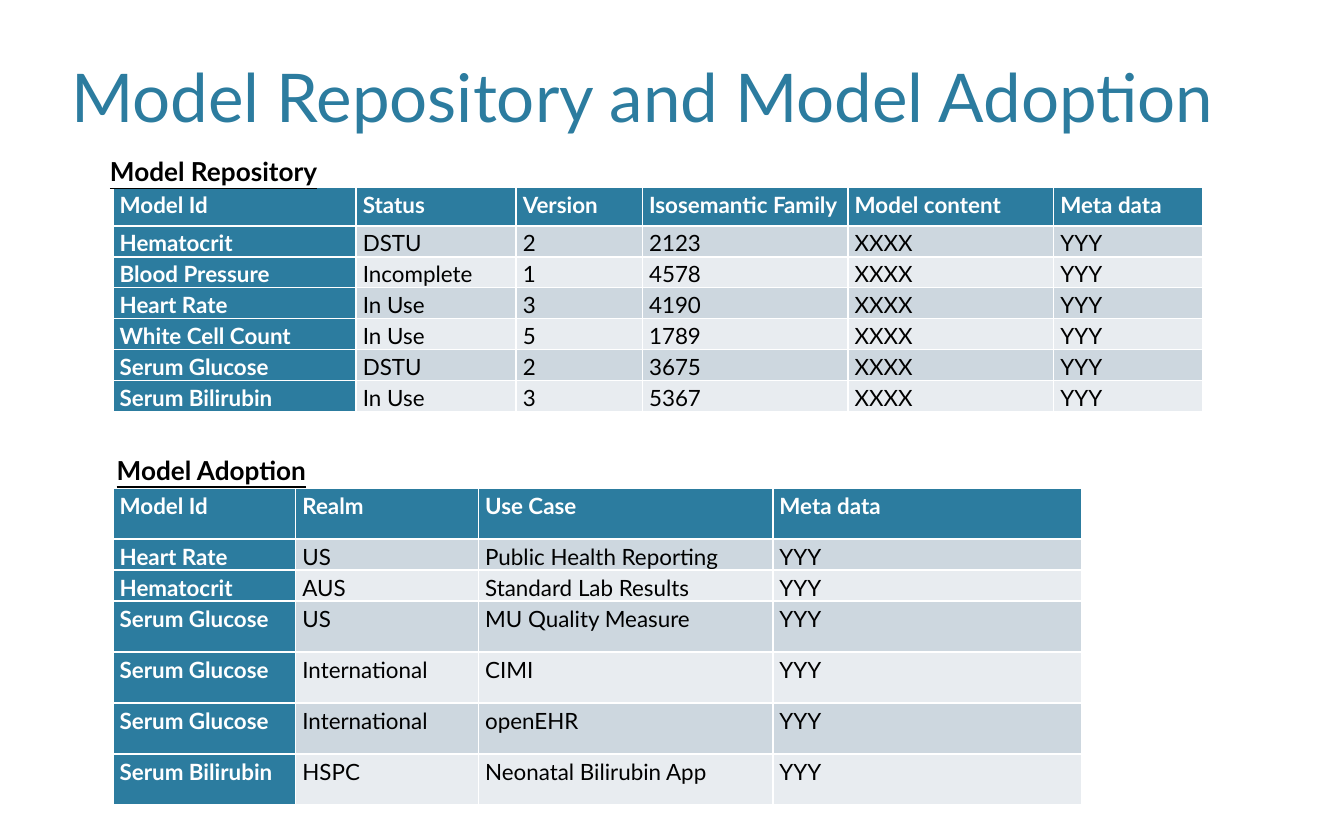
from dataclasses import dataclass

from pptx import Presentation
from pptx.dml.color import RGBColor
from pptx.enum import text
from pptx.util import Inches, Pt


@dataclass(frozen=True)
class Theme:
    font: str = "Lato"
    accent: RGBColor = RGBColor(0x2C, 0x7C, 0x9F)
    dark_band: RGBColor = RGBColor(0xCD, 0xD7, 0xDF)
    light_band: RGBColor = RGBColor(0xE8, 0xEC, 0xF0)
    ink: RGBColor = RGBColor(0, 0, 0)
    paper: RGBColor = RGBColor(255, 255, 255)
    title_size: int = 36
    heading_size: int = 14
    cell_size: int = 12


@dataclass(frozen=True)
class Area:
    left: float
    top: float
    width: float
    height: float

    def lengths(self) -> tuple:
        return tuple(map(Inches, (self.left, self.top, self.width, self.height)))


@dataclass(frozen=True)
class Section:
    heading: str
    heading_area: Area
    table_area: Area
    column_widths: list[float]
    row_heights: list[float]
    rows: list[list[str]]


THEME = Theme()

SECTIONS = [
    Section(
        "Model Repository",
        Area(0.72, 1.11, 1.84, 0.34),
        Area(0.84, 1.39, 8.11, 1.84),
        [1.81, 1.19, 0.94, 1.53, 1.53, 1.11],
        [0.29] + [0.23] * 6,
        [
            ["Model Id", "Status", "Version", "Isosemantic Family", "Model content", "Meta data"],
            ["Hematocrit", "DSTU", "2", "2123", "XXXX", "YYY"],
            ["Blood Pressure", "Incomplete", "1", "4578", "XXXX", "YYY"],
            ["Heart Rate", "In Use", "3", "4190", "XXXX", "YYY"],
            ["White Cell Count", "In Use", "5", "1789", "XXXX", "YYY"],
            ["Serum Glucose", "DSTU", "2", "3675", "XXXX", "YYY"],
            ["Serum Bilirubin", "In Use", "3", "5367", "XXXX", "YYY"],
        ],
    ),
    Section(
        "Model Adoption",
        Area(0.77, 3.33, 1.67, 0.34),
        Area(0.84, 3.63, 7.21, 2.38),
        [1.36, 1.36, 2.19, 2.3],
        [0.38] + [0.21] * 2 + [0.38] * 4,
        [
            ["Model Id", "Realm", "Use Case", "Meta data"],
            ["Heart Rate", "US", "Public Health Reporting", "YYY"],
            ["Hematocrit", "AUS", "Standard Lab Results", "YYY"],
            ["Serum Glucose", "US", "MU Quality Measure", "YYY"],
            ["Serum Glucose", "International", "CIMI", "YYY"],
            ["Serum Glucose", "International", "openEHR", "YYY"],
            ["Serum Bilirubin", "HSPC", "Neonatal Bilirubin App", "YYY"],
        ],
    ),
]


def format_text(frame, size: int, color: RGBColor, bold: bool = False, underline: bool = False) -> None:
    for para in frame.paragraphs:
        for span in para.runs:
            span.font.name = THEME.font
            span.font.size = Pt(size)
            span.font.color.rgb = color
            span.font.bold = bold
            span.font.underline = underline


def add_title(page, words: str, area: Area) -> None:
    title = page.shapes.title
    title.left, title.top, title.width, title.height = area.lengths()
    frame = title.text_frame
    frame.text = words
    frame.auto_size = text.MSO_AUTO_SIZE.NONE
    frame.vertical_anchor = text.MSO_ANCHOR.BOTTOM
    frame.paragraphs[0].alignment = text.PP_ALIGN.CENTER
    format_text(frame, THEME.title_size, THEME.accent)


def add_heading(page, section: Section) -> None:
    frame = page.shapes.add_textbox(*section.heading_area.lengths()).text_frame
    frame.text = section.heading
    frame.word_wrap = False
    frame.auto_size = text.MSO_AUTO_SIZE.SHAPE_TO_FIT_TEXT
    format_text(frame, THEME.heading_size, THEME.ink, bold=True, underline=True)


def fill_cell(cell, words: str, row: int, column: int) -> None:
    """Accent the header row and first column; band the other cells."""
    is_header = row == 0 or column == 0
    band = THEME.dark_band if row % 2 else THEME.light_band
    cell.fill.solid()
    cell.fill.fore_color.rgb = THEME.accent if is_header else band
    cell.margin_left = cell.margin_right = Inches(0.05)
    cell.margin_top = cell.margin_bottom = 0
    cell.text_frame.text = words
    cell.text_frame.paragraphs[0].line_spacing = 1.15
    color = THEME.paper if is_header else THEME.ink
    format_text(cell.text_frame, THEME.cell_size, color, bold=is_header)


def add_section_table(page, section: Section) -> None:
    """Add the table; its default style supplies the white cell borders."""
    table = page.shapes.add_table(
        len(section.rows), len(section.column_widths), *section.table_area.lengths()
    ).table
    table.first_col = True
    for column, width in zip(table.columns, section.column_widths):
        column.width = Inches(width)
    for row, height in zip(table.rows, section.row_heights):
        row.height = Inches(height)
    for row, values in enumerate(section.rows):
        for column, words in enumerate(values):
            fill_cell(table.cell(row, column), words, row, column)


def main() -> None:
    deck = Presentation()
    deck.slide_width, deck.slide_height = Inches(10), Inches(6.25)
    page = deck.slides.add_slide(deck.slide_layouts[5])
    add_title(page, "Model Repository and Model Adoption", Area(0.38, 0.21, 8.8, 0.85))
    for section in SECTIONS:
        add_section_table(page, section)
    for section in SECTIONS:
        add_heading(page, section)
    deck.save("out.pptx")


if __name__ == "__main__":
    main()
